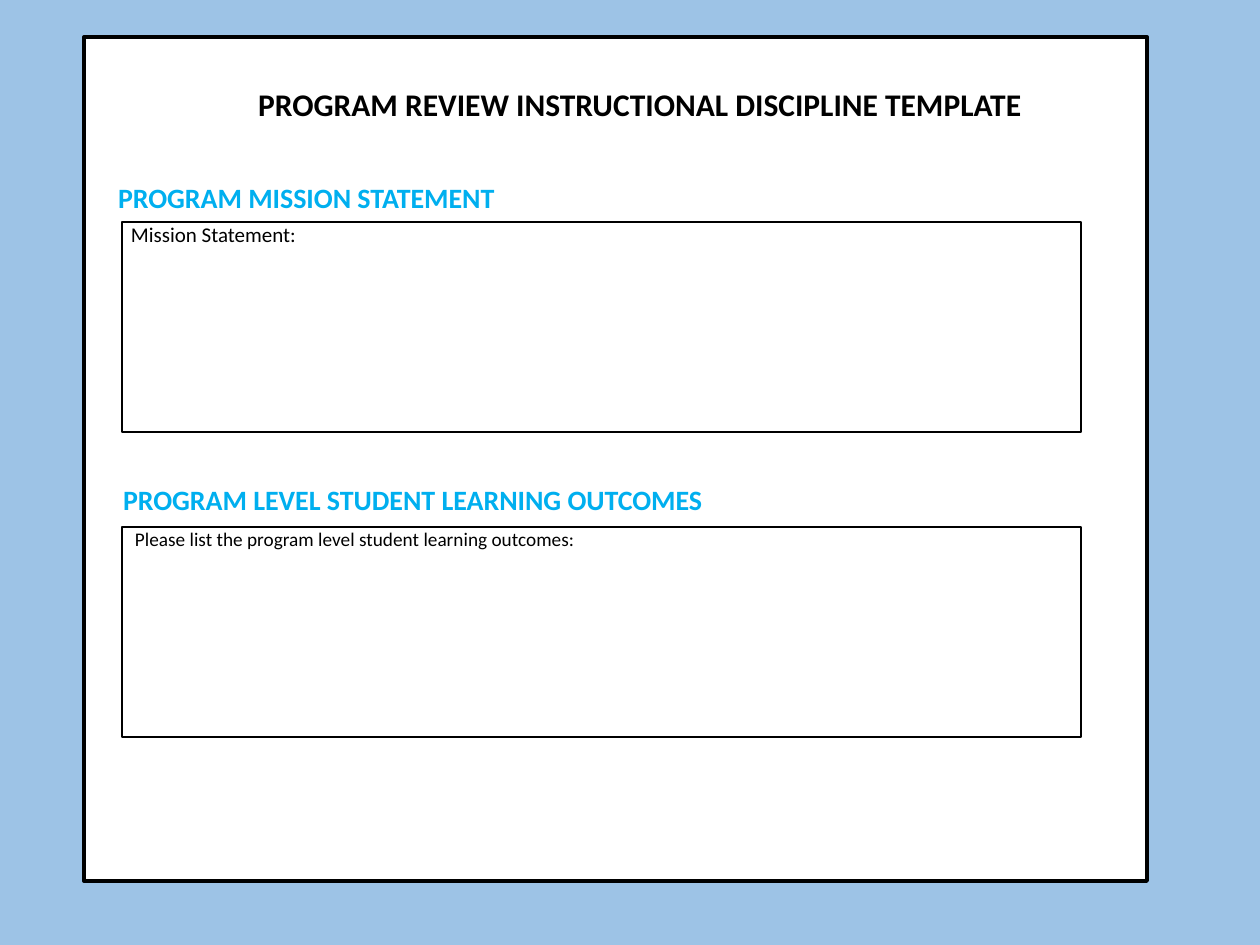
from dataclasses import dataclass

from pptx import Presentation
from pptx.dml.color import RGBColor as Rgb
from pptx.enum.shapes import MSO_SHAPE as Shape
from pptx.enum.text import MSO_ANCHOR as Anchor, PP_ALIGN as Align
from pptx.util import Emu, Pt

EMU_PER_PX = 914400 / 126


@dataclass(frozen=True)
class Theme:
    font: str = "Calibri"
    backdrop: Rgb = Rgb(0x9D, 0xC3, 0xE6)
    paper: Rgb = Rgb(0xFF, 0xFF, 0xFF)
    ink: Rgb = Rgb(0, 0, 0)
    accent: Rgb = Rgb(0x00, 0xAF, 0xEF)
    title_size: int = 18
    heading_size: int = 16
    mission_size: int = 12
    outcomes_size: int = 11
    frame_line: float = 2.25
    field_line: float = 0.75


THEME = Theme()


def px(length):
    return Emu(round(length * EMU_PER_PX))


def set_attributes(target, values):
    for name, value in values.items():
        setattr(target, name, value)


def write_text(box, text, size, color, bold=False, align=Align.LEFT, indent=0):
    """Put one line of text at the top of a box, indented by whole px."""
    frame = box.text_frame
    set_attributes(frame, {
        "word_wrap": True, "vertical_anchor": Anchor.TOP,
        "margin_left": px(indent), "margin_right": 0,
        "margin_top": 0, "margin_bottom": 0,
    })
    para = frame.paragraphs[0]
    para.alignment = align
    span = para.add_run()
    span.text = text
    set_attributes(span.font, {"name": THEME.font, "size": Pt(size), "bold": bold})
    span.font.color.rgb = color


def add_box(page, area, line_width, fill=None):
    box = page.shapes.add_shape(Shape.RECTANGLE, *map(px, area))
    box.shadow.inherit = False
    if fill is None:
        box.fill.background()
    else:
        box.fill.solid()
        box.fill.fore_color.rgb = fill
    box.line.color.rgb = THEME.ink
    box.line.width = Pt(line_width)
    return box


def add_label(page, area, text, size, color, align=Align.LEFT):
    box = page.shapes.add_textbox(*map(px, area))
    write_text(box, text, size, color, bold=True, align=align)


def add_field(page, top, prompt, size, indent):
    box = add_box(page, (122, top, 959, 210), THEME.field_line)
    write_text(box, prompt, size, THEME.ink, indent=indent)


def main():
    deck = Presentation()
    set_attributes(deck, {"slide_width": px(1260), "slide_height": px(945)})
    page = deck.slides.add_slide(deck.slide_layouts[6])
    page.background.fill.solid()
    page.background.fill.fore_color.rgb = THEME.backdrop

    # Paper and title
    add_box(page, (84, 37, 1063, 844), THEME.frame_line, THEME.paper)
    add_label(page, (140, 85, 1000, 38),
              "PROGRAM REVIEW INSTRUCTIONAL DISCIPLINE TEMPLATE",
              THEME.title_size, THEME.ink, Align.CENTER)

    # Mission statement
    add_label(page, (118, 181, 900, 34), "PROGRAM MISSION STATEMENT",
              THEME.heading_size, THEME.accent)
    add_field(page, 222, "Mission Statement:", THEME.mission_size, 9)

    # Learning outcomes
    add_label(page, (123, 483, 900, 34), "PROGRAM LEVEL STUDENT LEARNING OUTCOMES",
              THEME.heading_size, THEME.accent)
    add_field(page, 527, "Please list the program level student learning outcomes:",
              THEME.outcomes_size, 13)

    deck.save("out.pptx")


if __name__ == "__main__":
    main()
